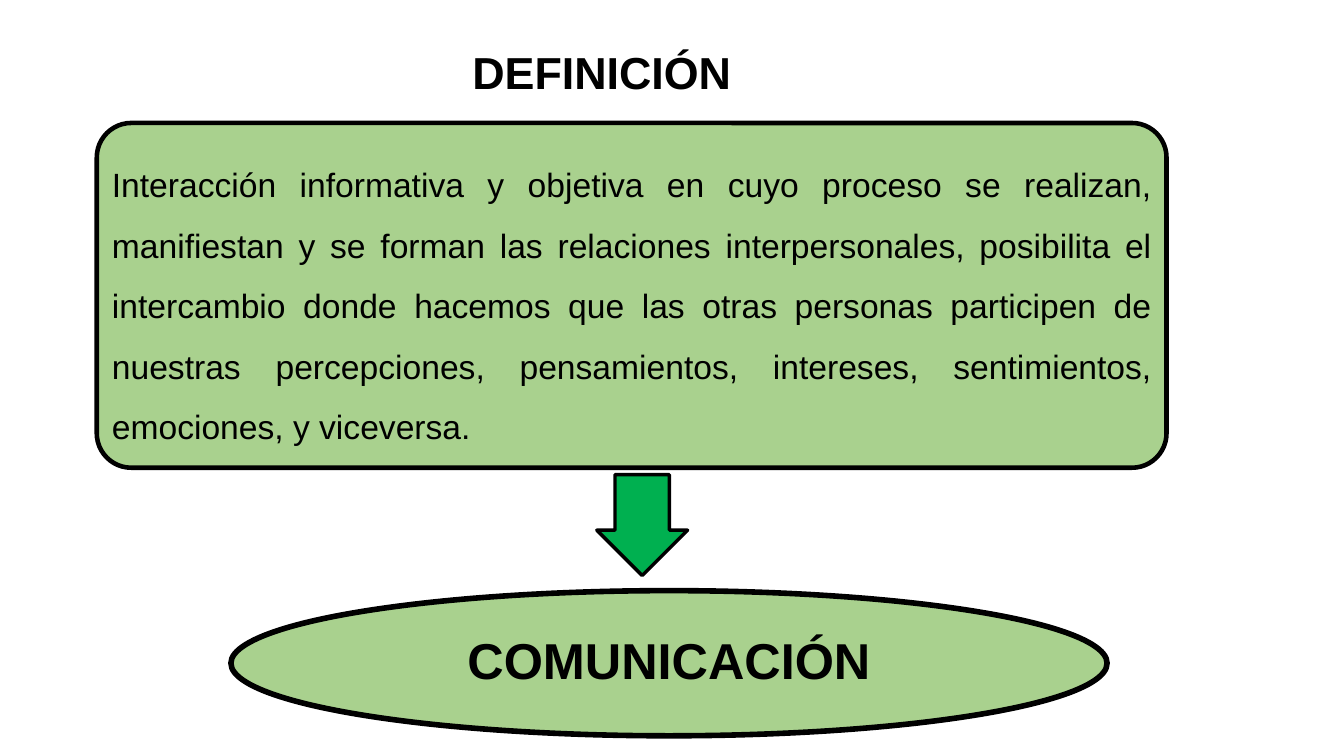
from pptx import Presentation
from pptx.dml.color import RGBColor
from pptx.enum.shapes import MSO_SHAPE
from pptx.enum.text import MSO_ANCHOR, PP_ALIGN
from pptx.util import Inches, Pt

BLACK, LIGHT_GREEN, GREEN = "000000", "A9D18E", "00B050"


def color(value):
    return RGBColor.from_string(value)


def write(shape, text, size, bold, align, spacing, inset):
    frame = shape.text_frame
    frame.word_wrap = True
    frame.vertical_anchor = MSO_ANCHOR.MIDDLE
    frame.margin_left = frame.margin_right = Inches(inset)
    frame.margin_top = frame.margin_bottom = Inches(inset)
    para = frame.paragraphs[0]
    para.alignment = align
    para.line_spacing = spacing
    span = para.add_run()
    span.text = text
    span.font.name = "Arial"
    span.font.size = Pt(size)
    span.font.bold = bold
    span.font.color.rgb = color(BLACK)


deck = Presentation()
deck.slide_width, deck.slide_height = Inches(13.33), Inches(7.5)
page = deck.slides.add_slide(deck.slide_layouts[6])

# Outlined shapes: kind, left, top, width, height, fill, line width
outlined = {}
for name, kind, left, top, width, height, fill, weight in [
    ("concept", MSO_SHAPE.OVAL, 2.29, 5.86, 8.69, 1.44, LIGHT_GREEN, 4),
    ("arrow", MSO_SHAPE.DOWN_ARROW, 5.92, 4.71, 0.9, 1, GREEN, 2.5),
    ("definition", MSO_SHAPE.ROUNDED_RECTANGLE, 0.96, 1.22, 10.61, 3.42, LIGHT_GREEN, 3.25),
]:
    shape = page.shapes.add_shape(
        kind, Inches(left), Inches(top), Inches(width), Inches(height))
    shape.shadow.inherit = False
    shape.fill.solid()
    shape.fill.fore_color.rgb = color(fill)
    shape.line.color.rgb = color(BLACK)
    shape.line.width = Pt(weight)
    outlined[name] = shape

outlined["arrow"].adjustments[0] = 0.6
outlined["arrow"].adjustments[1] = 0.5
outlined["definition"].adjustments[0] = 0.1

# Text inside the shapes
write(outlined["concept"], "COMUNICACIÓN", 36, True, PP_ALIGN.CENTER, 0.9, 0.03)
write(
    outlined["definition"],
    "Interacción informativa y objetiva en cuyo proceso se realizan, manifiestan "
    "y se forman las relaciones interpersonales, posibilita el intercambio donde "
    "hacemos que las otras personas participen de nuestras percepciones, "
    "pensamientos, intereses, sentimientos, emociones, y viceversa.",
    24, False, PP_ALIGN.JUSTIFY, 1.5, 0.05)

# Title
title = page.shapes.add_textbox(Inches(3.59), Inches(0.39), Inches(4.76), Inches(0.64))
write(title, "DEFINICIÓN", 32, True, PP_ALIGN.CENTER, 1.0, 0.05)

deck.save("out.pptx")
